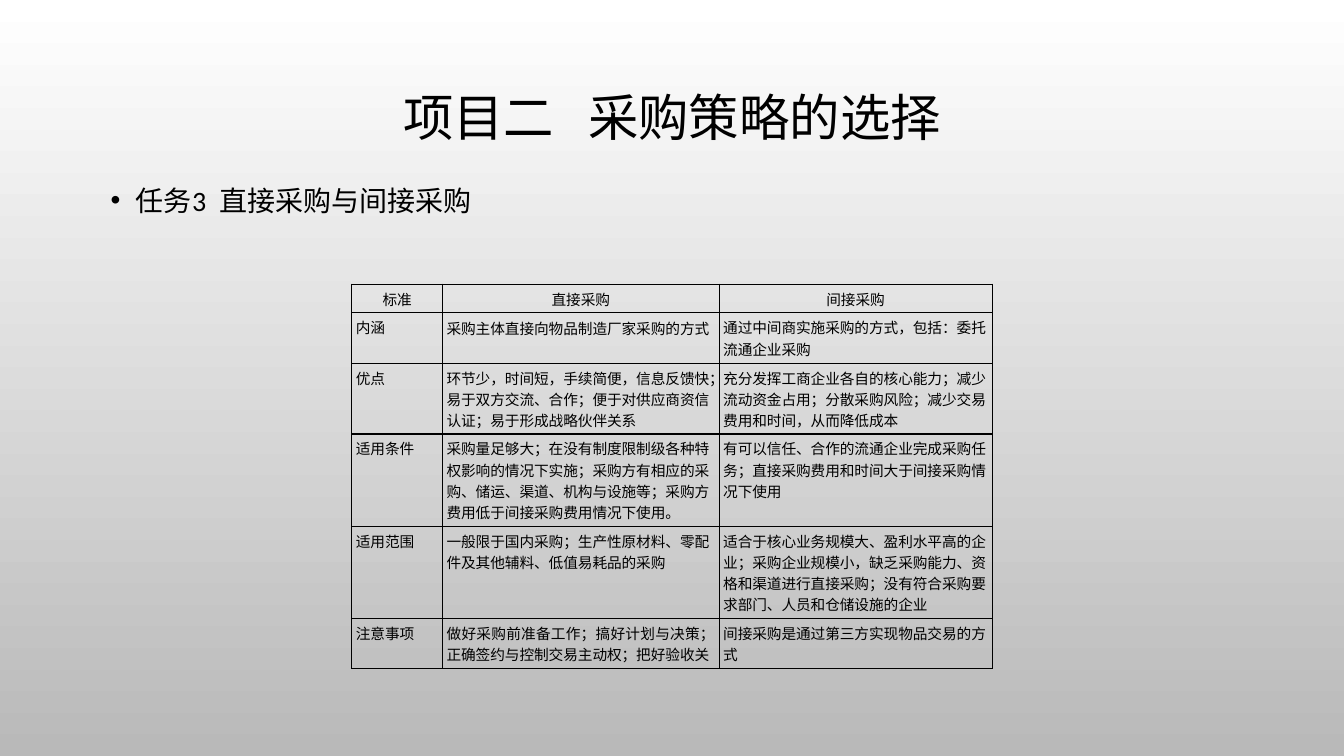
"""Build the slide comparing direct and indirect purchasing."""
from lxml import etree
from pptx import Presentation
from pptx import util as u
from pptx.dml import color
from pptx.enum import text
from pptx.oxml import ns

INK = "000000"
BACKDROP = ["FFFFFF", "B9B9B9"]
TITLE = ("项目二", "采购策略的选择")
TASK = ("任务3", "直接采购与间接采购")
CRITERIA = [
    ("标准", "直接采购", "间接采购"),
    ("内涵", "采购主体直接向物品制造厂家采购的方式",
     "通过中间商实施采购的方式，包括：委托流通企业采购"),
    ("优点",
     "环节少，时间短，手续简便，信息反馈快；易于双方交流、合作；便于对供应商资信认证；易于形成战略伙伴关系",
     "充分发挥工商企业各自的核心能力；减少流动资金占用；分散采购风险；减少交易费用和时间，从而降低成本"),
    ("适用条件",
     "采购量足够大；在没有制度限制级各种特权影响的情况下实施；采购方有相应的采购、储运、渠道、机构与设施等；采购方费用低于间接采购费用情况下使用。",
     "有可以信任、合作的流通企业完成采购任务；直接采购费用和时间大于间接采购情况下使用"),
    ("适用范围", "一般限于国内采购；生产性原材料、零配件及其他辅料、低值易耗品的采购",
     "适合于核心业务规模大、盈利水平高的企业；采购企业规模小，缺乏采购能力、资格和渠道进行直接采购；没有符合采购要求部门、人员和仓储设施的企业"),
    ("注意事项", "做好采购前准备工作；搞好计划与决策；正确签约与控制交易主动权；把好验收关",
     "间接采购是通过第三方实现物品交易的方式"),
]
COLUMN_WIDTHS = [64.8, 197.6, 195]
ROW_HEIGHTS = [20.5, 36, 50.5, 66, 66, 35.5]
JUSTIFIED = [(1, 1), (5, 1)]


def rgb(code):
    return color.RGBColor.from_string(code)


def style(run, size, face):
    run.font.size = u.Pt(size)
    run.font.name = face
    run.font.color.rgb = rgb(INK)


def add_heading(slide, parts, top, height, size, gap):
    """Add a two-part heading whose single space is widened by gap points."""
    frame = slide.shapes.add_textbox(u.Pt(72), u.Pt(top), u.Pt(816), u.Pt(height)).text_frame
    frame.word_wrap = True
    heading = frame.paragraphs[0]
    for part in (parts[0], " ", parts[1]):
        run = heading.add_run()
        run.text = part
        style(run, size, "Calibri")
        if part == " ":
            run.font._element.set("spc", str(gap * 100))
    return frame, heading


def add_bullet(paragraph, indent):
    properties = paragraph._p.get_or_add_pPr()
    properties.set("marL", str(u.Pt(indent)))
    properties.set("indent", str(-u.Pt(indent)))
    bullet_color = etree.SubElement(properties, ns.qn("a:buClr"))
    etree.SubElement(bullet_color, ns.qn("a:srgbClr"), val=INK)
    etree.SubElement(properties, ns.qn("a:buFont"), typeface="Arial")
    etree.SubElement(properties, ns.qn("a:buChar"), char="•")


def add_borders(cell):
    properties = cell._tc.get_or_add_tcPr()
    for side in ("lnL", "lnR", "lnT", "lnB"):
        border = etree.SubElement(properties, ns.qn(f"a:{side}"), w=str(u.Pt(1)))
        fill = etree.SubElement(border, ns.qn("a:solidFill"))
        etree.SubElement(fill, ns.qn("a:srgbClr"), val=INK)


def add_criteria(slide):
    table = slide.shapes.add_table(
        len(CRITERIA), len(COLUMN_WIDTHS), u.Pt(251.3), u.Pt(203),
        u.Pt(sum(COLUMN_WIDTHS)), u.Pt(sum(ROW_HEIGHTS))).table
    table.first_row = table.horz_banding = False
    for column, width in zip(table.columns, COLUMN_WIDTHS):
        column.width = u.Pt(width)
    for r, (entries, height) in enumerate(zip(CRITERIA, ROW_HEIGHTS)):
        table.rows[r].height = u.Pt(height)
        for c, entry in enumerate(entries):
            cell = table.cell(r, c)
            cell.margin_left = cell.margin_right = u.Pt(2.9)
            cell.margin_top = cell.margin_bottom = u.Pt(2.9)
            add_borders(cell)
            cell.fill.background()
            cell.text_frame.text = entry
            paragraph = cell.text_frame.paragraphs[0]
            style(paragraph.runs[0], 10.5, "Times New Roman")
            if r == 0:
                paragraph.alignment = text.PP_ALIGN.CENTER
            elif (r, c) in JUSTIFIED:
                paragraph.alignment = text.PP_ALIGN.JUSTIFY
    table.cell(1, 1).text_frame.paragraphs[0].line_spacing = u.Pt(15.6)


def main():
    deck = Presentation()
    deck.slide_width, deck.slide_height = u.Pt(960), u.Pt(540)
    slide = deck.slides.add_slide(deck.slide_layouts[6])

    backdrop = slide.background.fill
    backdrop.gradient()
    backdrop.gradient_angle = 270
    for stop, code in zip(backdrop.gradient_stops, BACKDROP):
        stop.color.rgb = rgb(code)

    frame, title = add_heading(slide, TITLE, 49, 74, 36, 16)
    frame.vertical_anchor = text.MSO_ANCHOR.MIDDLE
    title.alignment = text.PP_ALIGN.CENTER
    title.line_spacing = 0.9

    _, task = add_heading(slide, TASK, 122.4, 333.4, 20, 5)
    task.line_spacing = 1.2
    add_bullet(task, 18)

    add_criteria(slide)
    deck.save("out.pptx")


if __name__ == "__main__":
    main()
